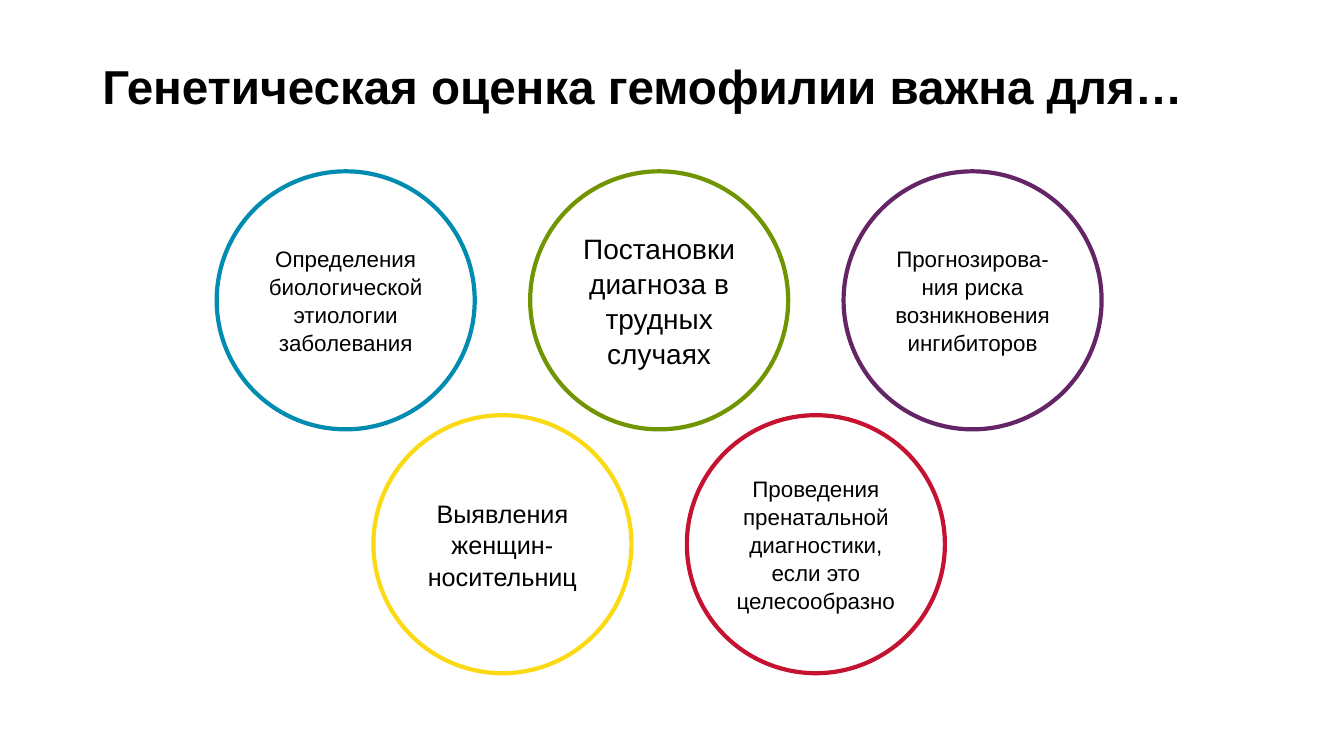
from pptx import Presentation
from pptx import util as u
from pptx.dml.color import RGBColor
from pptx.enum import shapes, text

COLOURS = {
    "ink": "000000",
    "paper": "FFFFFF",
    "blue": "008BB0",
    "green": "719500",
    "purple": "642566",
    "yellow": "FBD913",
    "red": "C41230",
}
FONT = "Arial"
DIAMETER = 184.3
PITCH = 223.9
ROW_STEP = 174.2
PURPOSE_ROWS = [
    [
        ("Определения биологической этиологии заболевания", "blue", 16),
        ("Постановки диагноза в трудных случаях", "green", 20),
        ("Прогнозирова-ния риска возникновения ингибиторов", "purple", 16),
    ],
    [
        ("Выявления женщин-носительниц", "yellow", 18),
        ("Проведения пренатальной диагностики, если это целесообразно", "red", 16),
    ],
]


def colour(name):
    """Return the named colour."""
    return RGBColor.from_string(COLOURS[name])


def write(frame, wording, size, bold=False):
    """Fill a text frame with one paragraph and return that paragraph."""
    frame.word_wrap = True
    frame.vertical_anchor = text.MSO_ANCHOR.MIDDLE
    paragraph = frame.paragraphs[0]
    paragraph.text = wording
    paragraph.font.name = FONT
    paragraph.font.size = u.Pt(size)
    paragraph.font.bold = bold
    paragraph.font.color.rgb = colour("ink")
    return paragraph


def add_title(slide, left, top, width, height):
    """Place the heading in the given box."""
    heading = slide.shapes.add_textbox(u.Pt(left), u.Pt(top), u.Pt(width), u.Pt(height))
    write(heading.text_frame, "Генетическая оценка гемофилии важна для…", 34, True)


def add_purpose(slide, left, top, diameter, wording, outline, size):
    """Draw one outlined circle holding a purpose."""
    circle = slide.shapes.add_shape(
        shapes.MSO_SHAPE.OVAL, u.Pt(left), u.Pt(top), u.Pt(diameter), u.Pt(diameter)
    )
    circle.shadow.inherit = False
    circle.fill.solid()
    circle.fill.fore_color.rgb = colour("paper")
    circle.line.color.rgb = colour(outline)
    circle.line.width = u.Pt(3)
    paragraph = write(circle.text_frame, wording, size)
    paragraph.alignment = text.PP_ALIGN.CENTER
    paragraph.line_spacing = 1.04


def add_purposes(slide, left, top, width):
    """Centre each row of circles across the given width."""
    for row, purposes in enumerate(PURPOSE_ROWS):
        row_width = DIAMETER + PITCH * (len(purposes) - 1)
        row_left = left + (width - row_width) / 2
        for column, (wording, outline, size) in enumerate(purposes):
            add_purpose(slide, row_left + column * PITCH, top + row * ROW_STEP,
                        DIAMETER, wording, outline, size)


def main():
    """Build and save the slide."""
    deck = Presentation()
    deck.slide_width, deck.slide_height = u.Pt(960), u.Pt(540)
    slide = deck.slides.add_slide(deck.slide_layouts[6])
    add_title(slide, 66, 18, 872, 86)
    add_purposes(slide, 154.8, 122.4, 632.1)
    deck.save("out.pptx")


if __name__ == "__main__":
    main()
